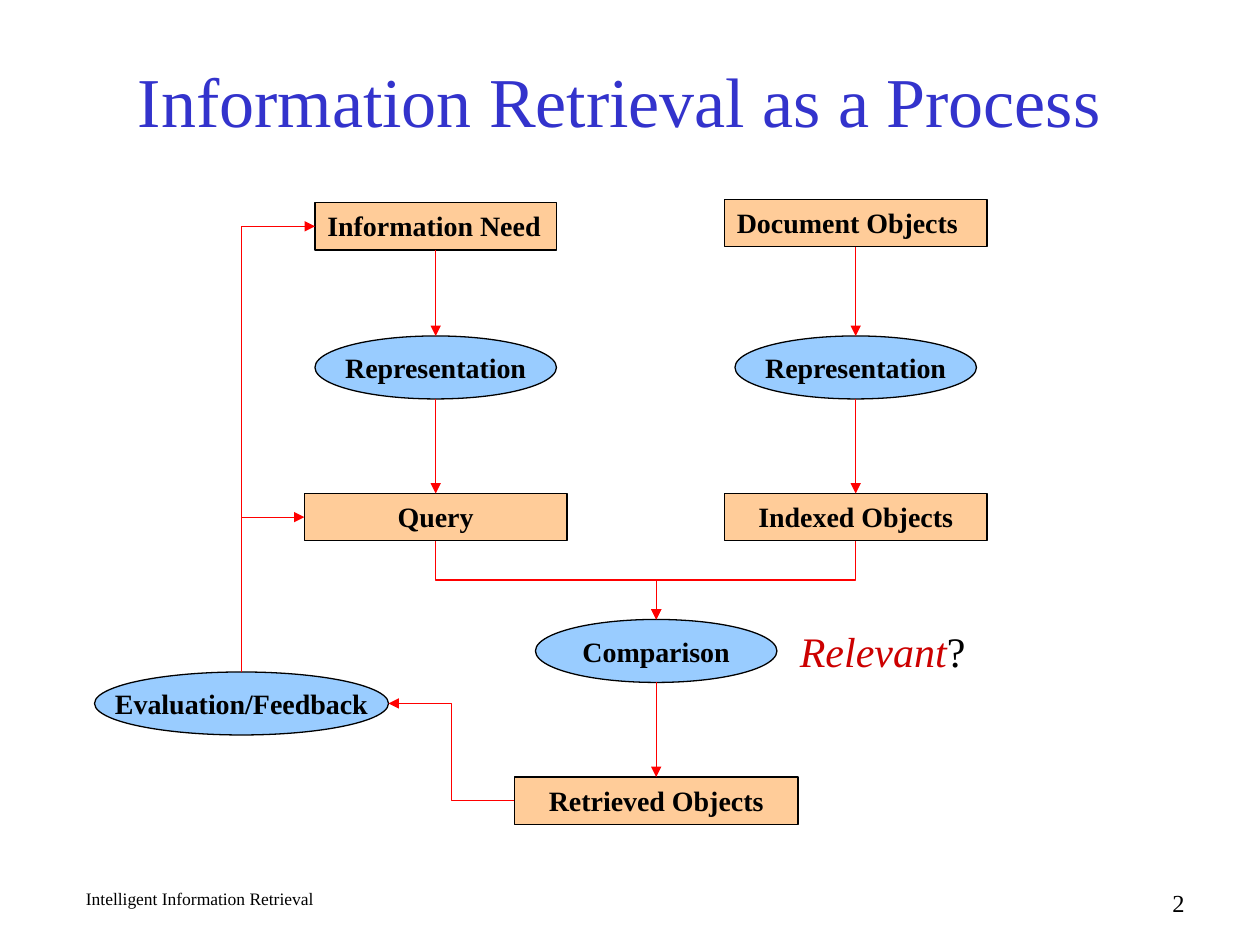
from lxml.etree import SubElement
from pptx import Presentation
from pptx.dml.color import RGBColor
from pptx.enum.shapes import MSO_CONNECTOR as Connector, MSO_SHAPE as Shape
from pptx.enum.text import MSO_ANCHOR as Anchor, PP_ALIGN as Align
from pptx.oxml.ns import qn
from pptx.util import Inches, Pt

# Grid: 12 columns and 12 rows to the inch
UNIT = Inches(1) / 12
FONT = "Times New Roman"
BLACK, RED = "000000", "FF0000"
BOX = dict(kind=Shape.RECTANGLE, fill="FFCC99", height=4.5, anchor=Anchor.TOP)
STEP = dict(kind=Shape.OVAL, fill="99CCFF", height=6, anchor=Anchor.MIDDLE)
QUERY, DOCUMENT, RESULT, FEEDBACK = 41.5, 81.5, 62.5, 23  # centre columns

# name: text, style, centre column, top row, width, alignment, wrap
NODES = {
    "need": ("Information Need", BOX, QUERY, 19.3, 23, Align.LEFT, False),
    "documents": ("Document Objects", BOX, DOCUMENT, 19, 25, Align.LEFT, True),
    "query": ("Query", BOX, QUERY, 47, 25, Align.CENTER, True),
    "index": ("Indexed Objects", BOX, DOCUMENT, 47, 25, Align.CENTER, True),
    "retrieved": ("Retrieved Objects", BOX, RESULT, 74, 27, Align.CENTER, True),
    "represent documents": ("Representation", STEP, DOCUMENT, 32, 23, Align.CENTER, False),
    "represent need": ("Representation", STEP, QUERY, 32, 23, Align.CENTER, False),
    "compare": ("Comparison", STEP, RESULT, 59, 23, Align.CENTER, False),
    "feedback": ("Evaluation/Feedback", STEP, FEEDBACK, 64, 28, Align.CENTER, False),
}
STRAIGHT = [
    ("need", "represent need"), ("represent need", "query"),
    ("documents", "represent documents"), ("represent documents", "index"),
    ("compare", "retrieved"),
]
# begin node and side, end node and side, preset
TOP, LEFT, BOTTOM, RIGHT = range(4)
BENT = [
    ("query", BOTTOM, "compare", TOP, "bentConnector3"),
    ("index", BOTTOM, "compare", TOP, "bentConnector3"),
    ("retrieved", LEFT, "feedback", RIGHT, "bentConnector3"),
    ("feedback", TOP, "query", LEFT, "bentConnector2"),
    ("feedback", TOP, "need", LEFT, "bentConnector2"),
]
# runs (text, size, colour, italic), grid place, alignment, anchor, wrap
LABELS = [
    ([("Information Retrieval as a Process", 40, "3333CC", False)],
     (8, 2, 102, 15), Align.CENTER, Anchor.MIDDLE, True),
    ([("Relevant", 24, "CC0000", True), ("?", 24, BLACK, False)],
     (75, 59, 18.5, 6), Align.LEFT, Anchor.TOP, False),
    ([("Intelligent Information Retrieval", 10, BLACK, False)],
     (7, 84, 45, 3), Align.LEFT, Anchor.TOP, True),
    ([("2", 14, BLACK, False)], (89, 84, 25, 3), Align.RIGHT, Anchor.TOP, True),
]


def color(value):
    return RGBColor.from_string(value)


def grid(*cells):
    return [round(cell * UNIT) for cell in cells]


def write(shape, runs, align, anchor, wrap, bold=False):
    frame = shape.text_frame
    frame.word_wrap = wrap
    frame.vertical_anchor = anchor
    paragraph = frame.paragraphs[0]
    paragraph.alignment = align
    for text, size, ink, italic in runs:
        run = paragraph.add_run()
        run.text = text
        run.font.name, run.font.size = FONT, Pt(size)
        run.font.bold, run.font.italic = bold, italic
        run.font.color.rgb = color(ink)


def add_node(slide, text, style, center, top, width, align, wrap):
    place = grid(center - width / 2, top, width, style["height"])
    shape = slide.shapes.add_shape(style["kind"], *place)
    shape.shadow.inherit = False
    shape.fill.solid()
    shape.fill.fore_color.rgb = color(style["fill"])
    shape.line.color.rgb = color(BLACK)
    shape.line.width = Pt(0.75)
    write(shape, [(text, 16, BLACK, False)], align, style["anchor"], wrap, bold=True)
    return shape


def side_point(shape, side):
    x, y = shape.left + shape.width // 2, shape.top + shape.height // 2
    return {TOP: (x, shape.top), LEFT: (shape.left, y),
            BOTTOM: (x, shape.top + shape.height),
            RIGHT: (shape.left + shape.width, y)}[side]


def add_arrow(slide, kind, begin, end):
    arrow = slide.shapes.add_connector(kind, *begin, *end)
    arrow.line.color.rgb = color(RED)
    arrow.line.width = Pt(0.75)
    SubElement(arrow.line._get_or_add_ln(), qn("a:tailEnd"), type="triangle")
    SubElement(arrow._element.spPr, qn("a:effectLst"))
    return arrow


def add_vertical_elbow(slide, begin, end, preset):
    """An elbow that leaves its begin point vertically: a quarter-turned frame."""
    (x1, y1), (x2, y2) = begin, end
    middle_x, middle_y = (x1 + x2) // 2, (y1 + y2) // 2
    half_w, half_h = abs(y2 - y1) // 2, abs(x2 - x1) // 2
    arrow = add_arrow(slide, Connector.ELBOW,
                      (middle_x - half_w, middle_y - half_h),
                      (middle_x + half_w, middle_y + half_h))
    frame = arrow._element.spPr.find(qn("a:xfrm"))
    frame.set("rot", str((90 if x2 < x1 else 270) * 60000))
    if x2 > x1 and y2 > y1:
        frame.set("flipH", "1")
    arrow._element.spPr.find(qn("a:prstGeom")).set("prst", preset)


presentation = Presentation()
presentation.slide_width, presentation.slide_height = Inches(10), Inches(7.5)
slide = presentation.slides.add_slide(presentation.slide_layouts[6])

# Boxes and steps
nodes = {name: add_node(slide, *node) for name, node in NODES.items()}

# Straight arrows, joined to the rectangles
for begin, end in STRAIGHT:
    arrow = add_arrow(slide, Connector.STRAIGHT,
                      side_point(nodes[begin], BOTTOM), side_point(nodes[end], TOP))
    if NODES[begin][1] is BOX:
        arrow.begin_connect(nodes[begin], BOTTOM)
    if NODES[end][1] is BOX:
        arrow.end_connect(nodes[end], TOP)

# Bent arrows
for begin, begin_side, end, end_side, preset in BENT:
    points = side_point(nodes[begin], begin_side), side_point(nodes[end], end_side)
    if begin_side in (TOP, BOTTOM):
        add_vertical_elbow(slide, *points, preset)
    else:
        add_arrow(slide, Connector.ELBOW, *points)

# Title, remark and footer
for runs, place, align, anchor, wrap in LABELS:
    write(slide.shapes.add_textbox(*grid(*place)), runs, align, anchor, wrap)

presentation.save("out.pptx")
